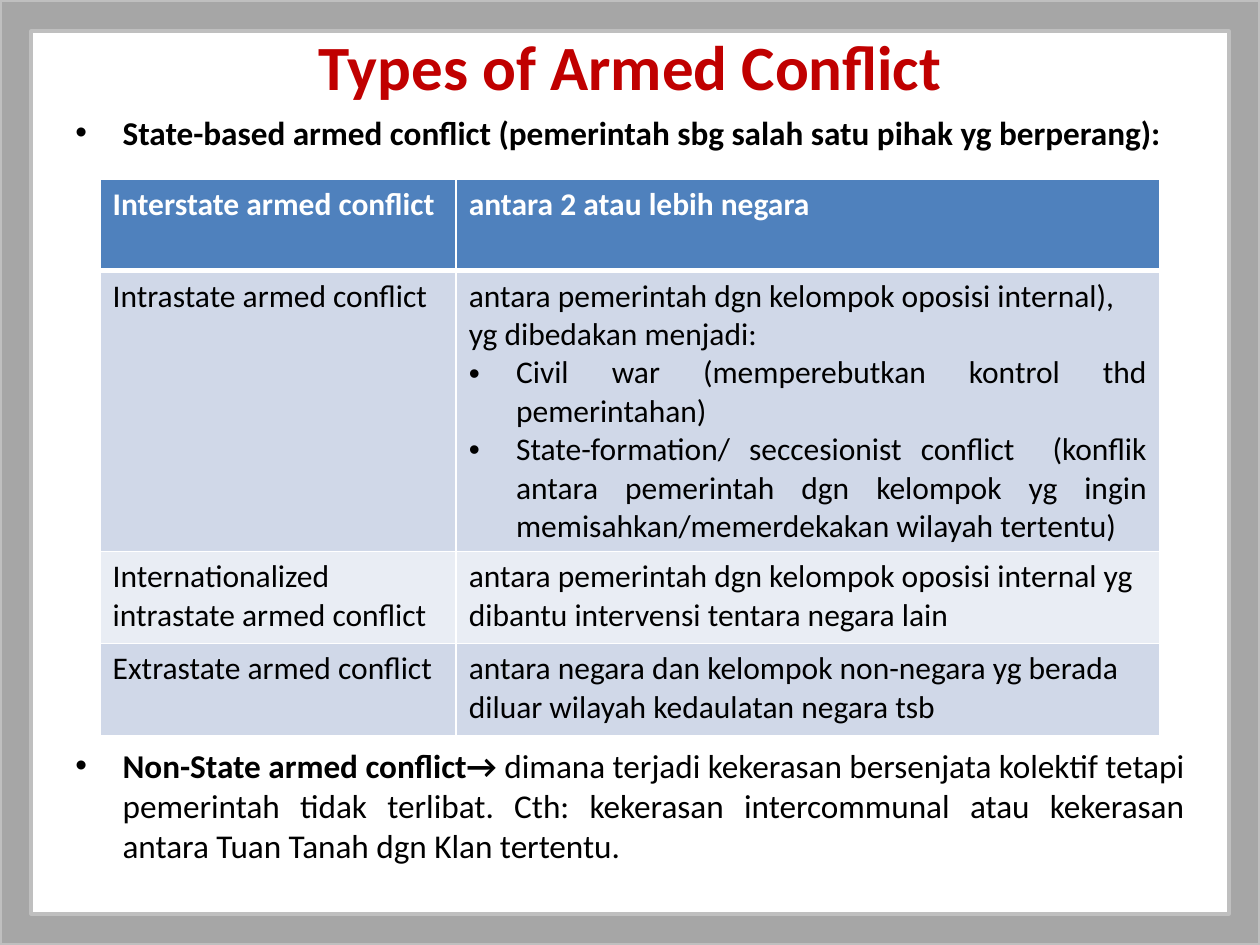
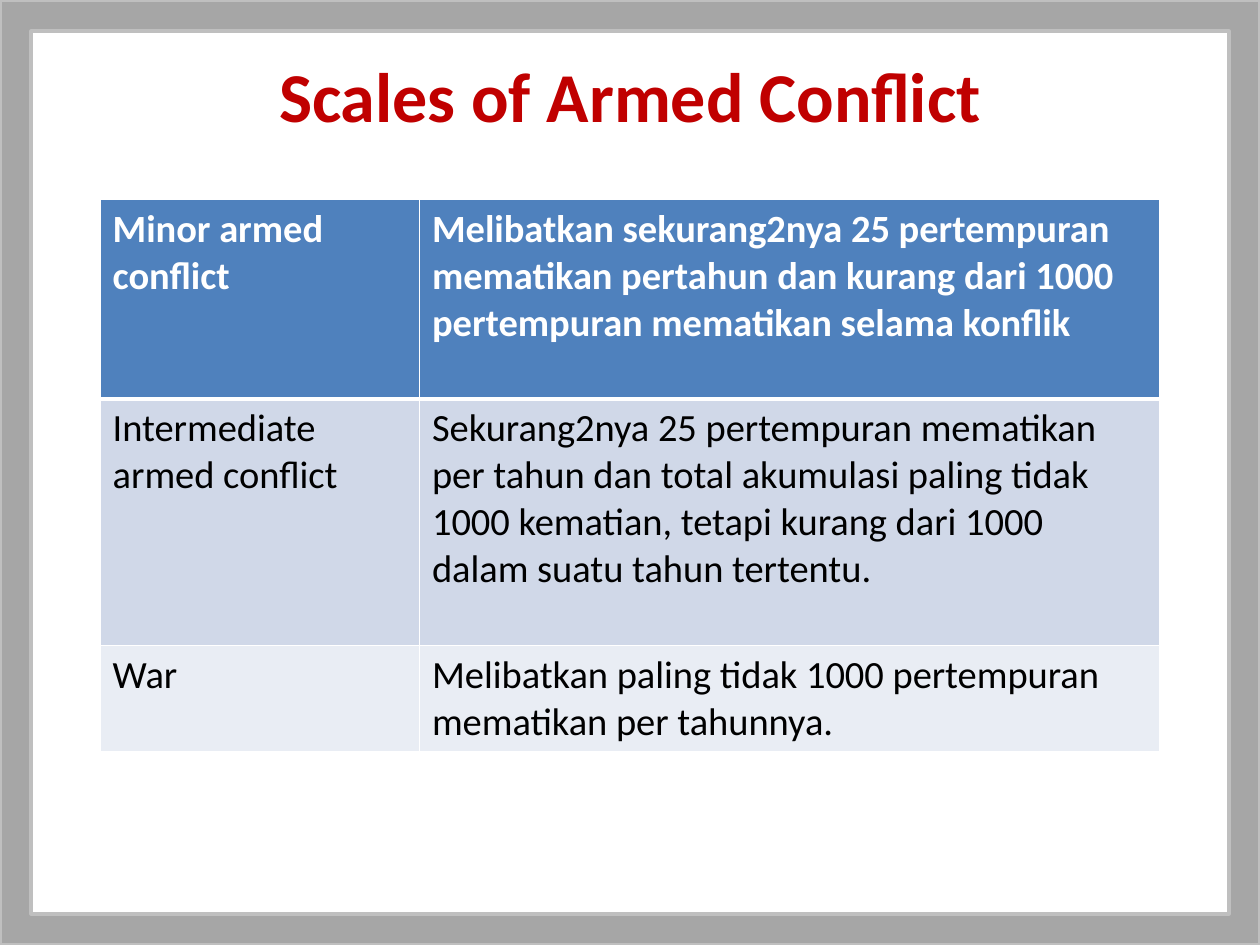
from dataclasses import dataclass

from lxml import etree
from pptx import Presentation
from pptx.dml.color import RGBColor
from pptx.enum import shapes, text
from pptx.oxml import ns
from pptx.util import Pt

# Content: a cell is a string, or a list whose later items are bullets
TYPES_TABLE = [
    ("Interstate armed conflict", "antara 2 atau lebih negara"),
    ("Intrastate armed conflict", [
        "antara pemerintah dgn kelompok oposisi internal), yg dibedakan menjadi:",
        "Civil war (memperebutkan kontrol thd pemerintahan)",
        "State-formation/ seccesionist conflict  (konflik antara pemerintah dgn "
        "kelompok yg ingin memisahkan/memerdekakan wilayah tertentu)",
    ]),
    ("Internationalized intrastate armed conflict",
     "antara pemerintah dgn kelompok oposisi internal yg dibantu intervensi tentara negara lain"),
    ("Extrastate armed conflict",
     "antara negara dan kelompok non-negara yg berada diluar wilayah kedaulatan negara tsb"),
]
SCALES_TABLE = [
    ("Minor armed conflict",
     "Melibatkan sekurang2nya 25 pertempuran mematikan pertahun dan kurang dari 1000 "
     "pertempuran mematikan selama konflik"),
    ("Intermediate armed conflict",
     "Sekurang2nya 25 pertempuran mematikan per tahun dan total akumulasi paling tidak "
     "1000 kematian, tetapi kurang dari 1000 dalam suatu tahun tertentu."),
    ("War", "Melibatkan paling tidak 1000 pertempuran mematikan per tahunnya."),
]
STATE_BASED = [("State-based armed conflict (pemerintah sbg salah satu pihak yg berperang):", True)]
NON_STATE = [
    ("Non-State armed conflict→ ", True),
    ("dimana terjadi kekerasan bersenjata kolektif tetapi pemerintah tidak terlibat. "
     "Cth: kekerasan intercommunal atau kekerasan antara Tuan Tanah dgn Klan tertentu.", False),
]
SLIDES = [
    dict(title="Types of Armed Conflict", title_size=36, title_top=19.4,
         points=[(60.5, 30, STATE_BASED), (422.5, 76, NON_STATE)],
         table=TYPES_TABLE, table_size=18, table_top=102.2,
         cols=(203.5, 402), rows=(52.5, 160.5, 52.5, 52.5)),
    dict(title="Scales of Armed Conflict", title_size=40, title_top=36,
         points=[],
         table=SCALES_TABLE, table_size=22, table_top=114,
         cols=(182.5, 423), rows=(114, 141, 60.5)),
]


@dataclass(frozen=True)
class Theme:
    font: str = "Calibri"
    title: str = "C00000"
    ink: str = "000000"
    white: str = "FFFFFF"
    frame: str = "A6A6A6"
    frame_line: str = "BFBFBF"
    header: str = "4F81BD"
    bands: tuple = ("D0D8E8", "E9EDF4")
    point_size: float = 19
    indent: float = 27


T = Theme()
WIDTH, HEIGHT, MARGIN = 720, 540, 36
TABLE_LEFT = 57.2


# Text
def add_text(p, words, size, color=T.ink, bold=False):
    r = p.add_run()
    r.text = words
    f = r.font
    f.name, f.size, f.bold = T.font, Pt(size), bold
    f.color.rgb = RGBColor.from_string(color)


def make_bullet(p):
    p.alignment = text.PP_ALIGN.JUSTIFY
    pPr = p._p.get_or_add_pPr()
    pPr.set("marL", str(Pt(T.indent)))
    pPr.set("indent", str(-Pt(T.indent)))
    etree.SubElement(pPr, ns.qn("a:buFont")).set("typeface", "Arial")
    etree.SubElement(pPr, ns.qn("a:buChar")).set("char", "•")


def add_title(s, words, size, top):
    sp = s.shapes.title
    sp.left, sp.top, sp.width, sp.height = Pt(MARGIN), Pt(top), Pt(WIDTH - 2 * MARGIN), Pt(36)
    tf = sp.text_frame
    tf.auto_size = text.MSO_AUTO_SIZE.NONE
    tf.vertical_anchor = text.MSO_ANCHOR.MIDDLE
    p = tf.paragraphs[0]
    p.alignment = text.PP_ALIGN.CENTER
    add_text(p, words, size, color=T.title, bold=True)


def add_point(s, top, height, runs):
    sp = s.shapes.add_textbox(Pt(MARGIN), Pt(top), Pt(WIDTH - 2 * MARGIN), Pt(height))
    tf = sp.text_frame
    tf.word_wrap = True
    p = tf.paragraphs[0]
    make_bullet(p)
    for words, bold in runs:
        add_text(p, words, T.point_size, bold=bold)


# Frame around the slide
def add_frame(s):
    sp = s.shapes.add_shape(shapes.MSO_SHAPE.FRAME, 0, 0, Pt(WIDTH), Pt(HEIGHT))
    sp.shadow.inherit = False
    sp.adjustments[0] = 0.033
    sp.fill.solid()
    sp.fill.fore_color.rgb = RGBColor.from_string(T.frame)
    sp.line.color.rgb = RGBColor.from_string(T.frame_line)
    sp.line.width = Pt(2)


# Table
def style_cell(cell, fill, top, bottom):
    tcPr = cell._tc.get_or_add_tcPr()
    for side, width in (("L", 1), ("R", 1), ("T", top), ("B", bottom)):
        ln = etree.SubElement(tcPr, ns.qn("a:ln" + side), w=str(Pt(width)))
        solid = etree.SubElement(ln, ns.qn("a:solidFill"))
        etree.SubElement(solid, ns.qn("a:srgbClr"), val=T.white)
    cell.fill.solid()
    cell.fill.fore_color.rgb = RGBColor.from_string(fill)


def add_table(s, data, size, top, cols, rows):
    table = s.shapes.add_table(len(rows), len(cols), Pt(TABLE_LEFT), Pt(top),
                               Pt(sum(cols)), Pt(sum(rows))).table
    for column, width in zip(table.columns, cols):
        column.width = Pt(width)
    for i, (row, height) in enumerate(zip(table.rows, rows)):
        row.height = Pt(height)
        head = i == 0
        fill = T.header if head else T.bands[(i - 1) % 2]
        for cell, content in zip(row.cells, data[i]):
            style_cell(cell, fill, top=3 if i == 1 else 1, bottom=3 if head else 1)
            tf = cell.text_frame
            lines = [content] if isinstance(content, str) else content
            for j, words in enumerate(lines):
                p = tf.add_paragraph() if j else tf.paragraphs[0]
                if j:
                    make_bullet(p)
                add_text(p, words, size, color=T.white if head else T.ink, bold=head)


def main():
    prs = Presentation()
    prs.slide_width, prs.slide_height = Pt(WIDTH), Pt(HEIGHT)
    for d in SLIDES:
        s = prs.slides.add_slide(prs.slide_layouts[5])
        add_title(s, d["title"], d["title_size"], d["title_top"])
        for top, height, runs in d["points"]:
            add_point(s, top, height, runs)
        add_frame(s)
        add_table(s, d["table"], d["table_size"], d["table_top"], d["cols"], d["rows"])
    prs.save("out.pptx")


if __name__ == "__main__":
    main()
